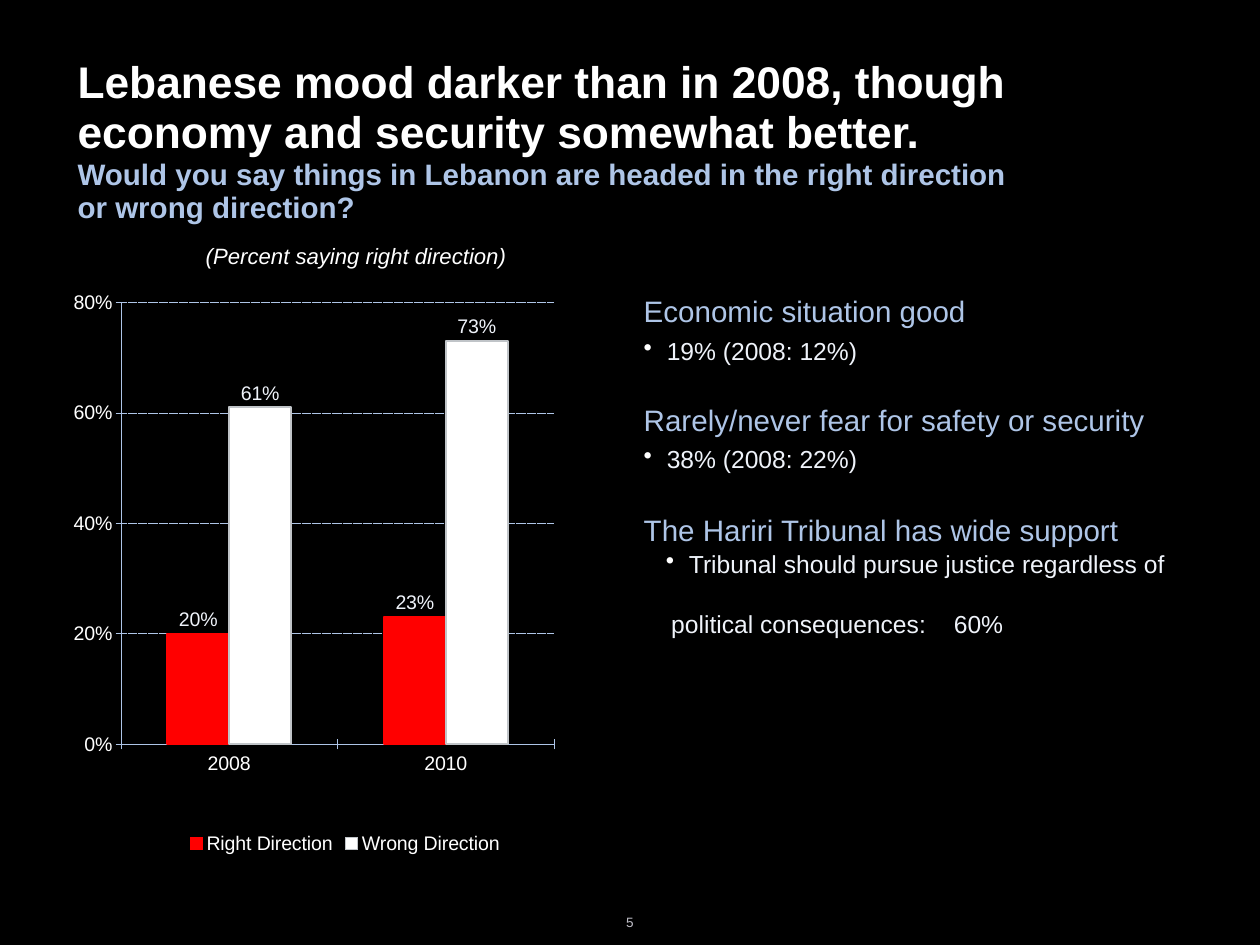
from dataclasses import dataclass

from pptx import Presentation
from pptx.chart.data import CategoryChartData
from pptx.dml.color import RGBColor
from pptx.enum.chart import (XL_CHART_TYPE, XL_LABEL_POSITION, XL_LEGEND_POSITION,
                             XL_TICK_LABEL_POSITION, XL_TICK_MARK)
from pptx.enum.dml import MSO_LINE
from pptx.enum.text import PP_ALIGN
from pptx.oxml import parse_xml
from pptx.oxml.ns import nsdecls, qn
from pptx.util import Inches, Pt


@dataclass(frozen=True)
class Theme:
    font: str = "Arial"
    back: str = "000000"
    white: str = "FFFFFF"
    blue: str = "AEC5E7"
    pale: str = "EFF3FA"
    grey: str = "BFBEC7"
    red: str = "FF0000"
    edge: str = "C0C4C8"
    title: float = 36
    head: float = 24
    body: float = 20
    note: float = 18
    chart: float = 16
    number: float = 11


T = Theme()
WIDTH, HEIGHT = Inches(14.22), Inches(10.67)
COLS, ROWS = 64, 48


def grid(col, row, cols, rows):
    """Turn grid columns and rows into left, top, width, height."""
    cw, rh = WIDTH / COLS, HEIGHT / ROWS
    return int(col * cw), int(row * rh), int(cols * cw), int(rows * rh)


def apply(obj, **values):
    for name, value in values.items():
        setattr(obj, name, value)


def style(font, size, color, **extra):
    apply(font, **{"name": T.font, "size": Pt(size), "bold": False, **extra})
    font.color.rgb = RGBColor.from_string(color)


def add_run(p, text, size, color, **extra):
    r = p.add_run()
    r.text = text
    style(r.font, size, color, **extra)


def add_frame(s, box, **values):
    tf = s.shapes.add_textbox(*box).text_frame
    apply(tf, **{"word_wrap": True, **values})
    return tf


def add_label(s, box, text, size, color, **extra):
    """One centred line of text."""
    p = add_frame(s, box).paragraphs[0]
    p.alignment = PP_ALIGN.CENTER
    add_run(p, text, size, color, **extra)


def add_title(s, box):
    p = add_frame(s, box).paragraphs[0]
    p.line_spacing = 0.94
    lines = [
        ("Lebanese mood darker than in 2008, though economy and security somewhat better.",
         T.title, T.white),
        ("Would you say things in Lebanon are headed in the right direction", T.head, T.blue),
        ("or wrong direction?", T.head, T.blue),
    ]
    for i, (text, size, color) in enumerate(lines):
        if i:
            p.add_line_break()
        add_run(p, text, size, color, bold=True)


def add_findings(s, box):
    tf = add_frame(s, box, margin_left=0, margin_top=0, margin_right=0, margin_bottom=0)
    head, body = (T.head, T.blue), (T.body, T.pale)
    # text, type, space before, left margin, first-line indent, bullet, tab stop
    rows = [
        ("Economic situation good", head, 0, 0, 0, False, None),
        ("19% (2008: 12%)", body, 5.5, 0.26, -0.26, True, None),
        ("Rarely/never fear for safety or security", head, 30, 0, 0, False, None),
        ("38% (2008: 22%)", body, 5.5, 0.26, -0.26, True, None),
        ("The Hariri Tribunal has wide support", head, 31, 0, 0, False, None),
        ("Tribunal should pursue justice regardless of", body, 1, 0.51, -0.26, True, None),
        ("political consequences:\t60%", body, 25, 0, 0.31, False, 3.41),
    ]
    for i, (text, (size, color), before, left, first, bullet, tab) in enumerate(rows):
        p = tf.add_paragraph() if i else tf.paragraphs[0]
        ppr = p._p.get_or_add_pPr()
        ppr.set("marL", str(Inches(left)))
        ppr.set("indent", str(Inches(first)))
        if bullet:
            ppr.append(parse_xml(f'<a:buClr {nsdecls("a")}><a:srgbClr val="{T.white}"/></a:buClr>'))
            ppr.append(parse_xml(f'<a:buChar {nsdecls("a")} char="•"/>'))
        if tab:
            ppr.append(parse_xml(f'<a:tabLst {nsdecls("a")}><a:tab pos="{Inches(tab)}" '
                                 'algn="l"/></a:tabLst>'))
        if before:
            p.space_before = Pt(before)
        add_run(p, text, size, color)


def manual_layout(parent, index, inner=False, **shares):
    """Place a chart part by shares of the chart's size."""
    for old in parent.findall(qn("c:layout")):
        parent.remove(old)
    target = '<c:layoutTarget val="inner"/>' if inner else ""
    modes = "".join(f'<c:{k}Mode val="edge"/>' for k in "xy")
    sizes = "".join(f'<c:{k} val="{v}"/>' for k, v in shares.items())
    parent.insert(index, parse_xml(f'<c:layout {nsdecls("c")}><c:manualLayout>{target}{modes}'
                                   f'{sizes}</c:manualLayout></c:layout>'))


def style_line(line, color, width):
    line.color.rgb = RGBColor.from_string(color)
    line.width = Pt(width)


def add_direction_chart(s, box):
    data = CategoryChartData(number_format="0%")
    data.categories = ["2008", "2010"]
    data.add_series("Right Direction", (0.2, 0.23))
    data.add_series("Wrong Direction", (0.61, 0.73))
    chart = s.shapes.add_chart(XL_CHART_TYPE.COLUMN_CLUSTERED, *box, data).chart
    apply(chart, has_title=False, has_legend=True)
    style(chart.font, T.chart, T.white)

    # Axes
    cat, val = chart.category_axis, chart.value_axis
    for axis, width in ((cat, 0.38), (val, 0.22)):
        apply(axis, major_tick_mark=XL_TICK_MARK.CROSS, minor_tick_mark=XL_TICK_MARK.NONE)
        style(axis.tick_labels.font, T.chart, T.white)
        style_line(axis.format.line, T.blue, width)
    cat.tick_label_position = XL_TICK_LABEL_POSITION.LOW
    apply(val, minimum_scale=0, maximum_scale=0.8, major_unit=0.2, has_major_gridlines=True)
    apply(val.tick_labels, number_format="0%", number_format_is_linked=False)
    grid_line = val.major_gridlines.format.line
    style_line(grid_line, T.blue, 0.22)
    grid_line.dash_style = MSO_LINE.SQUARE_DOT

    # Columns and their values
    plot = chart.plots[0]
    apply(plot, gap_width=150, overlap=0, vary_by_categories=False)
    for series, fill, edge in zip(plot.series, (T.red, T.white), (T.red, T.edge)):
        series.format.fill.solid()
        series.format.fill.fore_color.rgb = RGBColor.from_string(fill)
        style_line(series.format.line, edge, 1.5)
        labels = series.data_labels
        apply(labels, show_value=True, position=XL_LABEL_POSITION.OUTSIDE_END,
              number_format="0%", number_format_is_linked=False)
        style(labels.font, T.chart, T.pale)

    # Legend and plot placement
    apply(chart.legend, position=XL_LEGEND_POSITION.BOTTOM, include_in_layout=False)
    style(chart.legend.font, T.chart, T.white)
    manual_layout(chart.legend._element, 1, x=0.22, y=0.83)
    manual_layout(chart._chartSpace.chart.plotArea, 0, inner=True, x=0.09, y=0.02, w=0.89, h=0.68)


def main():
    prs = Presentation()
    apply(prs, slide_width=WIDTH, slide_height=HEIGHT)
    s = prs.slides.add_slide(prs.slide_layouts[6])
    s.background.fill.solid()
    s.background.fill.fore_color.rgb = RGBColor.from_string(T.back)

    add_title(s, grid(3.5, 2.75, 57.3, 8))
    add_label(s, grid(6.93, 12.1, 22.3, 1.8), "(Percent saying right direction)",
              T.note, T.white, italic=True)
    add_direction_chart(s, grid(3.74, 14.7, 24.9, 33))
    add_findings(s, grid(32.7, 14.9, 28.1, 22.7))
    add_label(s, grid(31.1, 46.2, 1.8, 1.3), "5", T.number, T.grey)
    prs.save("out.pptx")


if __name__ == "__main__":
    main()
